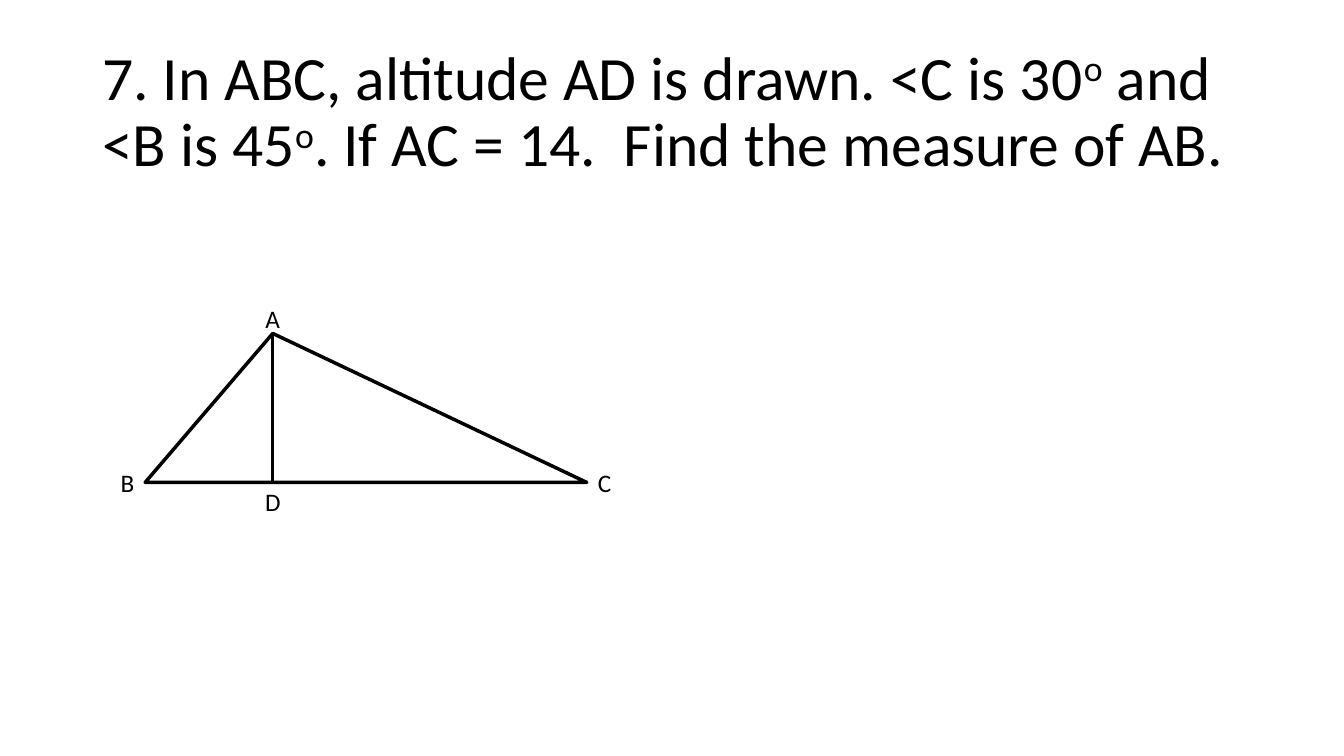
from pptx import Presentation
from pptx.dml.color import RGBColor
from pptx.enum import shapes, text
from pptx.oxml import ns
from pptx.util import Pt
from lxml import etree

COLORS = {"ink": "000000", "paper": "FFFFFF"}
FONT = "Calibri"
LINE_WIDTH = 2.5
LEFT, TOP, WIDTH, HEIGHT = 103.7, 238.2, 315.4, 106.4
APEX = 0.289
LABEL_W, LABEL_H = 25.4, 29


def color(name):
    return RGBColor.from_string(COLORS[name])


def add_text(s, content, x, y, w, h, size=18, wrap=False, spacing=None,
             anchor=text.MSO_ANCHOR.TOP, align=text.PP_ALIGN.LEFT):
    tf = s.shapes.add_textbox(Pt(x), Pt(y), Pt(w), Pt(h)).text_frame
    tf.word_wrap = wrap
    tf.vertical_anchor = anchor
    p = tf.paragraphs[0]
    p.alignment = align
    p.line_spacing = spacing
    for i, part in enumerate(content.split("^")):
        r = p.add_run()
        r.text = part
        r.font.name = FONT
        r.font.size = Pt(size)
        r.font.color.rgb = color("ink")
        if i % 2:
            r._r.get_or_add_rPr().set("baseline", "30000")


def style_line(sp):
    sp.line.color.rgb = color("ink")
    sp.line.width = Pt(LINE_WIDTH)


def add_triangle(s, x, y, w, h, apex):
    sp = s.shapes.add_shape(shapes.MSO_SHAPE.ISOSCELES_TRIANGLE,
                            Pt(x), Pt(y), Pt(w), Pt(h))
    sp.adjustments[0] = apex
    sp.shadow.inherit = False
    sp.fill.background()
    style_line(sp)


def add_line(s, x1, y1, x2, y2):
    sp = s.shapes.add_connector(shapes.MSO_CONNECTOR.STRAIGHT,
                                Pt(x1), Pt(y1), Pt(x2), Pt(y2))
    style_line(sp)
    etree.SubElement(sp._element.spPr, ns.qn("a:effectLst"))


def add_label(s, letter, x, y):
    add_text(s, letter, x, y, LABEL_W, LABEL_H, align=text.PP_ALIGN.CENTER)


def main():
    prs = Presentation()
    prs.slide_width, prs.slide_height = Pt(960), Pt(540)
    s = prs.slides.add_slide(prs.slide_layouts[6])
    s.background.fill.solid()
    s.background.fill.fore_color.rgb = color("paper")

    add_text(s, "7. In ABC, altitude AD is drawn. <C is 30^o^ and <B is 45^o^. "
             "If AC = 14.  Find the measure of AB.", 66, 28.8, 828, 104.4,
             size=44, wrap=True, spacing=0.9, anchor=text.MSO_ANCHOR.MIDDLE)

    foot, base = LEFT + APEX * WIDTH, TOP + HEIGHT
    add_triangle(s, LEFT, TOP, WIDTH, HEIGHT, APEX)
    add_line(s, foot, TOP, foot, base)

    for letter, x, y in (("A", foot - LABEL_W / 2, TOP - 25),
                         ("B", LEFT - LABEL_W, base - LABEL_H / 2),
                         ("C", LEFT + WIDTH, base - LABEL_H / 2),
                         ("D", foot - LABEL_W / 2, base - 1)):
        add_label(s, letter, x, y)

    prs.save("out.pptx")


if __name__ == "__main__":
    main()
